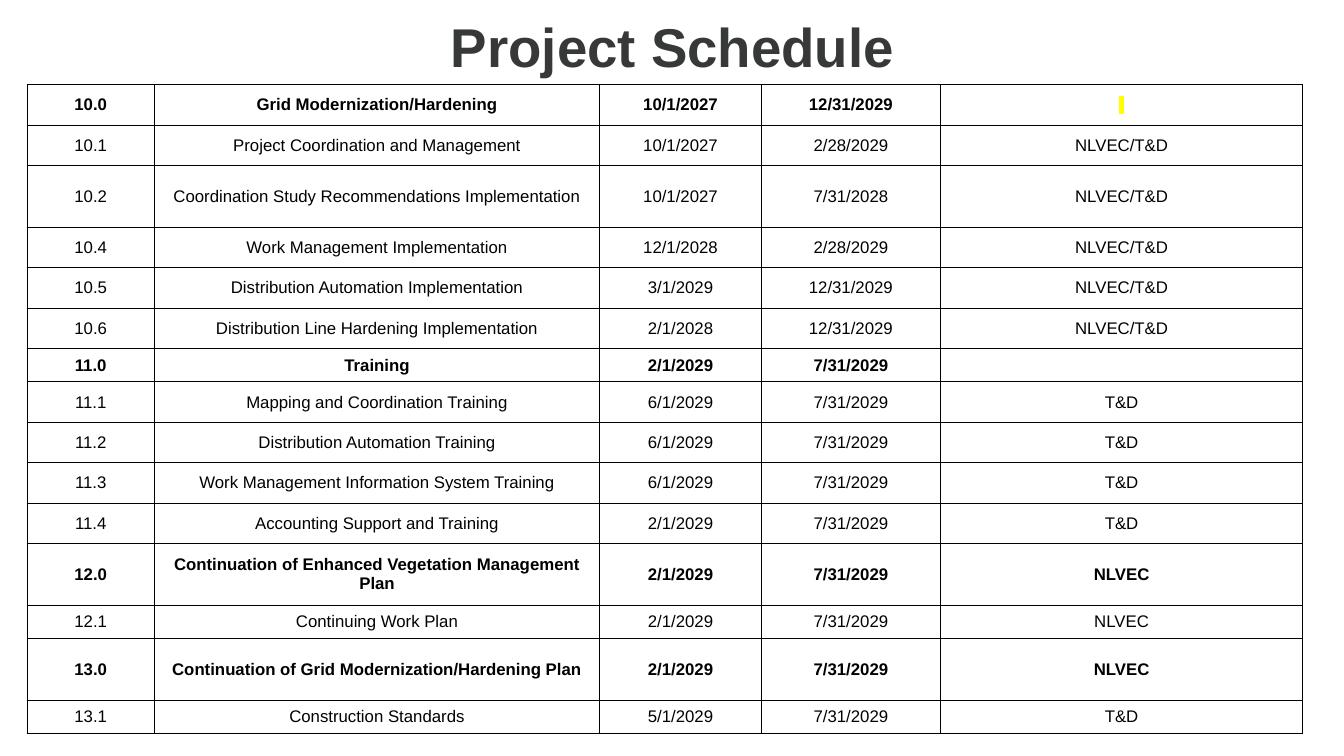
from dataclasses import dataclass

from lxml.etree import SubElement
from pptx import Presentation
from pptx.dml.color import RGBColor
from pptx.enum.text import MSO_ANCHOR, MSO_AUTO_SIZE, PP_ALIGN
from pptx.oxml import parse_xml
from pptx.oxml.ns import nsdecls, qn
from pptx.util import Inches, Pt

TITLE = "Project Schedule"
TASKS = [
    ("10.0", "Grid Modernization/Hardening", "10/1/2027", "12/31/2029", " "),
    ("10.1", "Project Coordination and Management", "10/1/2027", "2/28/2029", "NLVEC/T&D"),
    ("10.2", "Coordination Study Recommendations Implementation", "10/1/2027", "7/31/2028", "NLVEC/T&D"),
    ("10.4", "Work Management Implementation", "12/1/2028", "2/28/2029", "NLVEC/T&D"),
    ("10.5", "Distribution Automation Implementation", "3/1/2029", "12/31/2029", "NLVEC/T&D"),
    ("10.6", "Distribution Line Hardening Implementation", "2/1/2028", "12/31/2029", "NLVEC/T&D"),
    ("11.0", "Training", "2/1/2029", "7/31/2029", ""),
    ("11.1", "Mapping and Coordination Training", "6/1/2029", "7/31/2029", "T&D"),
    ("11.2", "Distribution Automation Training", "6/1/2029", "7/31/2029", "T&D"),
    ("11.3", "Work Management Information System Training", "6/1/2029", "7/31/2029", "T&D"),
    ("11.4", "Accounting Support and Training", "2/1/2029", "7/31/2029", "T&D"),
    ("12.0", "Continuation of Enhanced Vegetation Management Plan", "2/1/2029", "7/31/2029", "NLVEC"),
    ("12.1", "Continuing Work Plan", "2/1/2029", "7/31/2029", "NLVEC"),
    ("13.0", "Continuation of Grid Modernization/Hardening Plan", "2/1/2029", "7/31/2029", "NLVEC"),
    ("13.1", "Construction Standards", "5/1/2029", "7/31/2029", "T&D"),
]
COL_WIDTHS = (1.26, 4.42, 1.6, 1.78, 3.59)
ROW_HEIGHT = 0.4
SPECIAL_HEIGHTS = {"10.2": 0.61, "11.0": 0.33, "12.0": 0.61, "12.1": 0.33, "13.0": 0.61, "13.1": 0.33}
TABLE_LEFT, TABLE_TOP, TABLE_HEIGHT = 0.27, 0.84, 6.44


@dataclass(frozen=True)
class Theme:
    font: str = "Arial"
    title_color: str = "373838"
    text_color: str = "000000"
    highlight: str = "FFFF00"
    title_size: int = 39
    body_size: int = 12
    border: int = 1


THEME = Theme()


def write(tf, text, size=THEME.body_size, color=THEME.text_color, bold=False, highlight=None):
    p = tf.paragraphs[0]
    p.alignment = PP_ALIGN.CENTER
    r = p.add_run()
    r.text = text
    r.font.name = THEME.font
    r.font.size = Pt(size)
    r.font.bold = bold
    r.font.color.rgb = RGBColor.from_string(color)
    if highlight:
        mark = parse_xml(f'<a:highlight {nsdecls("a")}><a:srgbClr val="{highlight}"/></a:highlight>')
        r.font._element.find(qn("a:solidFill")).addnext(mark)
    return p


def add_borders(cell):
    tc_pr = cell._tc.get_or_add_tcPr()
    for i, side in enumerate(("lnL", "lnR", "lnT", "lnB")):
        ln = parse_xml(f'<a:{side} {nsdecls("a")} w="{Pt(THEME.border)}"/>')
        SubElement(SubElement(ln, qn("a:solidFill")), qn("a:srgbClr"), val=THEME.text_color)
        tc_pr.insert(i, ln)


def add_title(s):
    title = s.shapes.title
    title.left, title.top, title.width, title.height = map(Inches, (0.41, -0.01, 12.52, 0.85))
    tf = title.text_frame
    tf.word_wrap = True
    tf.auto_size = MSO_AUTO_SIZE.NONE
    tf.vertical_anchor = MSO_ANCHOR.BOTTOM
    write(tf, TITLE, size=THEME.title_size, color=THEME.title_color, bold=True).line_spacing = 0.9


def add_schedule(s):
    heights = [SPECIAL_HEIGHTS.get(task[0], ROW_HEIGHT) for task in TASKS]
    scale = TABLE_HEIGHT / sum(heights)
    table = s.shapes.add_table(
        len(TASKS), len(COL_WIDTHS), Inches(TABLE_LEFT), Inches(TABLE_TOP),
        Inches(sum(COL_WIDTHS)), Inches(TABLE_HEIGHT)).table
    table.first_row = table.horz_banding = False
    for column, width in zip(table.columns, COL_WIDTHS):
        column.width = Inches(width)
    for row, height, task in zip(table.rows, heights, TASKS):
        row.height = Inches(height * scale)
        for cell, text in zip(row.cells, task):
            cell.margin_left = cell.margin_right = cell.margin_top = cell.margin_bottom = 0
            cell.vertical_anchor = MSO_ANCHOR.MIDDLE
            cell.fill.background()
            add_borders(cell)
            write(cell.text_frame, text, bold=task[0].endswith(".0"),
                  highlight=THEME.highlight if text.isspace() else None)


def main():
    prs = Presentation()
    prs.slide_width, prs.slide_height = Inches(13.33), Inches(7.5)
    s = prs.slides.add_slide(prs.slide_layouts[5])
    add_title(s)
    add_schedule(s)
    prs.save("out.pptx")


if __name__ == "__main__":
    main()
